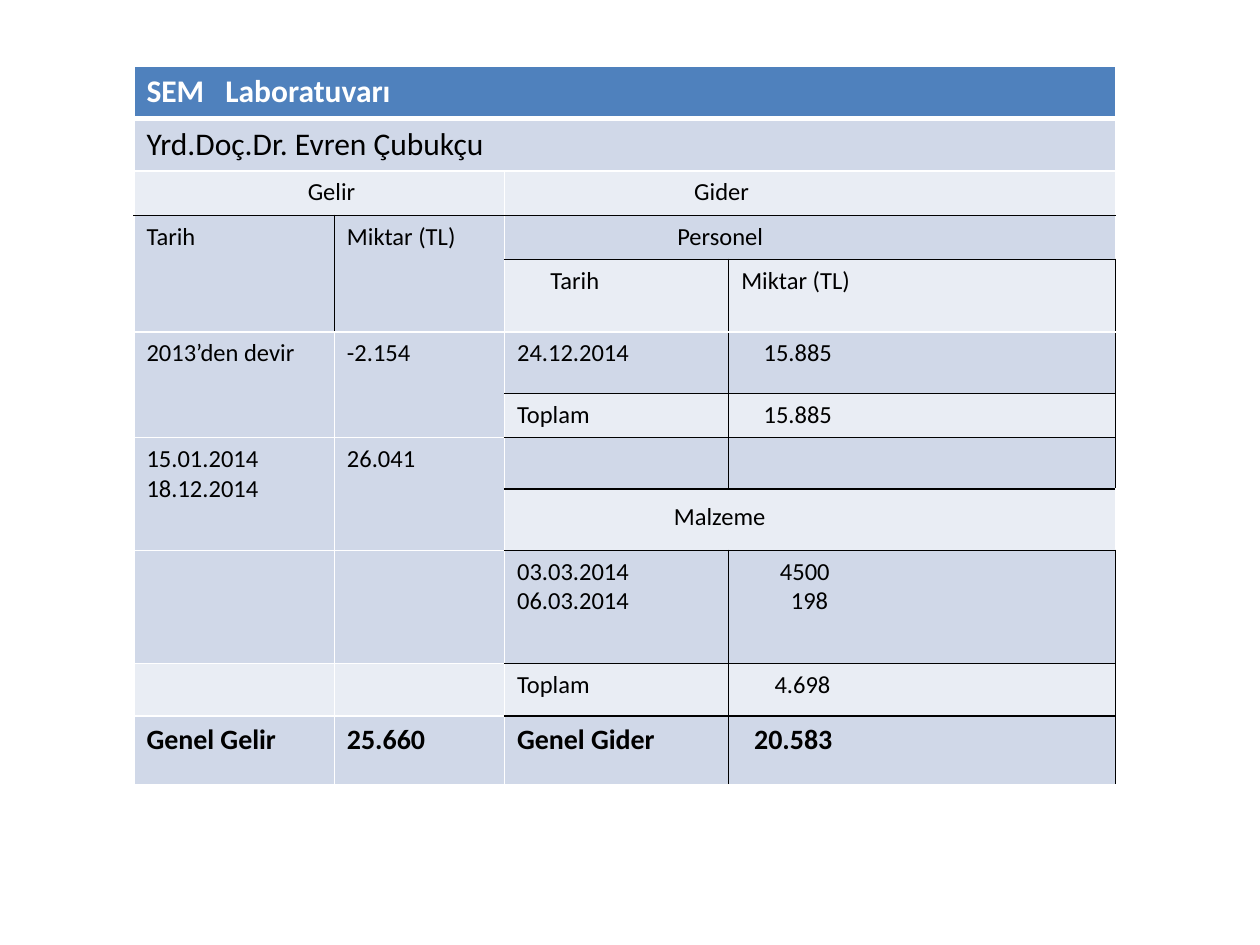
from dataclasses import dataclass

from lxml.etree import SubElement
from pptx import Presentation
from pptx.dml.color import RGBColor as Rgb
from pptx.oxml import parse_xml
from pptx.oxml.ns import nsdecls, qn
from pptx.table import Table
from pptx.util import Cm, Pt


@dataclass(frozen=True)
class Theme:
    font: str = "Calibri"
    heading: int = 18
    body: int = 14
    total: int = 16
    header_fill: str = "4F81BD"
    dark_band: str = "D0D8E8"
    light_band: str = "E9EDF4"
    white: str = "FFFFFF"
    black: str = "000000"
    rule: float = 1
    header_rule: float = 3


THEME = Theme()


@dataclass(frozen=True)
class Line:
    text: str
    indent: float = 0  # cm
    tab: float = 0  # cm


@dataclass(frozen=True)
class Entry:
    row: int
    col: int
    lines: tuple[Line, ...] = ()
    rows: int = 1
    cols: int = 1
    black: str = ""  # edges ruled in black, out of L R T B
    size: int = THEME.body
    color: str = THEME.black
    bold: bool = False
    top: float = 0.13  # cm


COLUMNS = (4.04, 3.43, 4.52, 7.8)
ROWS = (1.06, 1.06, 0.89, 0.89, 1.46, 1.24, 0.89, 1.03, 1.24, 2.28, 1.06, 1.39)

ENTRIES = (
    # Heading
    Entry(0, 0, (Line("SEM\tLaboratuvarı", tab=1.59),), cols=4,
          size=THEME.heading, color=THEME.white, bold=True),
    Entry(1, 0, (Line("Yrd.Doç.Dr. Evren Çubukçu"),), cols=4, size=THEME.heading),
    Entry(2, 0, (Line("Gelir", 3.25),), cols=2, black="B"),
    Entry(2, 2, (Line("Gider", 3.57),), cols=2, black="B"),
    # Income
    Entry(3, 0, (Line("Tarih"),), rows=2, black="RT"),
    Entry(3, 1, (Line("Miktar (TL)"),), rows=2, black="LT"),
    Entry(5, 0, (Line("2013’den devir"),), rows=2),
    Entry(5, 1, (Line("-2.154"),), rows=2),
    Entry(7, 0, (Line("15.01.2014"), Line("18.12.2014")), rows=2),
    Entry(7, 1, (Line("26.041"),), rows=2),
    Entry(9, 0),
    Entry(9, 1),
    Entry(10, 0),
    Entry(10, 1),
    # Staff expenses
    Entry(3, 2, (Line("Personel", 3.23),), cols=2, black="TB"),
    Entry(4, 2, (Line("Tarih", 0.67),), black="RT"),
    Entry(4, 3, (Line("Miktar (TL)"),), black="LRT"),
    Entry(5, 2, (Line("24.12.2014"),), black="RB"),
    Entry(5, 3, (Line("15.885", 0.45),), black="LRB"),
    Entry(6, 2, (Line("Toplam"),), black="RTB"),
    Entry(6, 3, (Line("15.885", 0.45),), black="LRTB"),
    Entry(7, 2, black="RTB"),
    Entry(7, 3, black="LRTB"),
    # Material expenses
    Entry(8, 2, (Line("Malzeme", 3.16),), cols=2, black="TB", top=0.27),
    Entry(9, 2, (Line("03.03.2014"), Line("06.03.2014")), black="RTB"),
    Entry(9, 3, (Line("4500", 0.78), Line("198", 1)), black="LRTB"),
    Entry(10, 2, (Line("Toplam"),), black="RTB"),
    Entry(10, 3, (Line("4.698", 0.67),), black="LRTB"),
    # Grand totals
    Entry(11, 0, (Line("Genel Gelir"),), size=THEME.total, bold=True),
    Entry(11, 1, (Line("25.660"),), size=THEME.total, bold=True),
    Entry(11, 2, (Line("Genel Gider"),), black="RT", size=THEME.total, bold=True),
    Entry(11, 3, (Line("20.583", 0.26),), black="LRT", size=THEME.total, bold=True),
)


def band_color(row: int) -> str:
    if row == 0:
        return THEME.header_fill
    return THEME.dark_band if row % 2 else THEME.light_band


def draw_borders(table: Table, entry: Entry) -> None:
    """Rule the outer edges of an entry, over every cell it spans."""
    last_row = entry.row + entry.rows - 1
    last_col = entry.col + entry.cols - 1
    for row in range(entry.row, last_row + 1):
        for col in range(entry.col, last_col + 1):
            outer = {"L": col == entry.col, "R": col == last_col,
                     "T": row == entry.row, "B": row == last_row}
            props = table.cell(row, col)._tc.get_or_add_tcPr()
            edges = [edge for edge, is_outer in outer.items() if is_outer]
            for place, edge in enumerate(edges):
                under_header = (row, edge) in ((0, "B"), (1, "T"))
                width = Pt(THEME.header_rule if under_header else THEME.rule)
                color = THEME.black if edge in entry.black else THEME.white
                props.insert(place, parse_xml(
                    f'<a:ln{edge} {nsdecls("a")} w="{width}"><a:solidFill>'
                    f'<a:srgbClr val="{color}"/></a:solidFill></a:ln{edge}>'))


def draw_entry(table: Table, entry: Entry) -> None:
    cell = table.cell(entry.row, entry.col)
    if entry.rows * entry.cols > 1:
        cell.merge(table.cell(entry.row + entry.rows - 1, entry.col + entry.cols - 1))
    cell.fill.solid()
    cell.fill.fore_color.rgb = Rgb.from_string(band_color(entry.row))
    cell.margin_top = Cm(entry.top)
    draw_borders(table, entry)

    frame = cell.text_frame
    for number, line in enumerate(entry.lines):
        paragraph = frame.add_paragraph() if number else frame.paragraphs[0]
        paragraph.text = line.text
        props = paragraph._p.get_or_add_pPr()
        if line.indent:
            props.set("marL", str(Cm(line.indent)))
        if line.tab:
            stops = SubElement(props, qn("a:tabLst"))
            SubElement(stops, qn("a:tab"), pos=str(Cm(line.tab)), algn="l")
        font = paragraph.font
        font.name, font.size, font.bold = THEME.font, Pt(entry.size), entry.bold
        font.color.rgb = Rgb.from_string(entry.color)


def main() -> None:
    deck = Presentation()
    deck.slide_width, deck.slide_height = Cm(25.4), Cm(19.05)
    slide = deck.slides.add_slide(deck.slide_layouts[6])

    # Income and expense table
    ledger = slide.shapes.add_table(
        len(ROWS), len(COLUMNS), Cm(2.7), Cm(1.33),
        Cm(sum(COLUMNS)), Cm(sum(ROWS))).table
    ledger.horz_banding = False
    for column, width in zip(ledger.columns, COLUMNS):
        column.width = Cm(width)
    for row, height in zip(ledger.rows, ROWS):
        row.height = Cm(height)
    for entry in ENTRIES:
        draw_entry(ledger, entry)

    deck.save("out.pptx")


if __name__ == "__main__":
    main()
